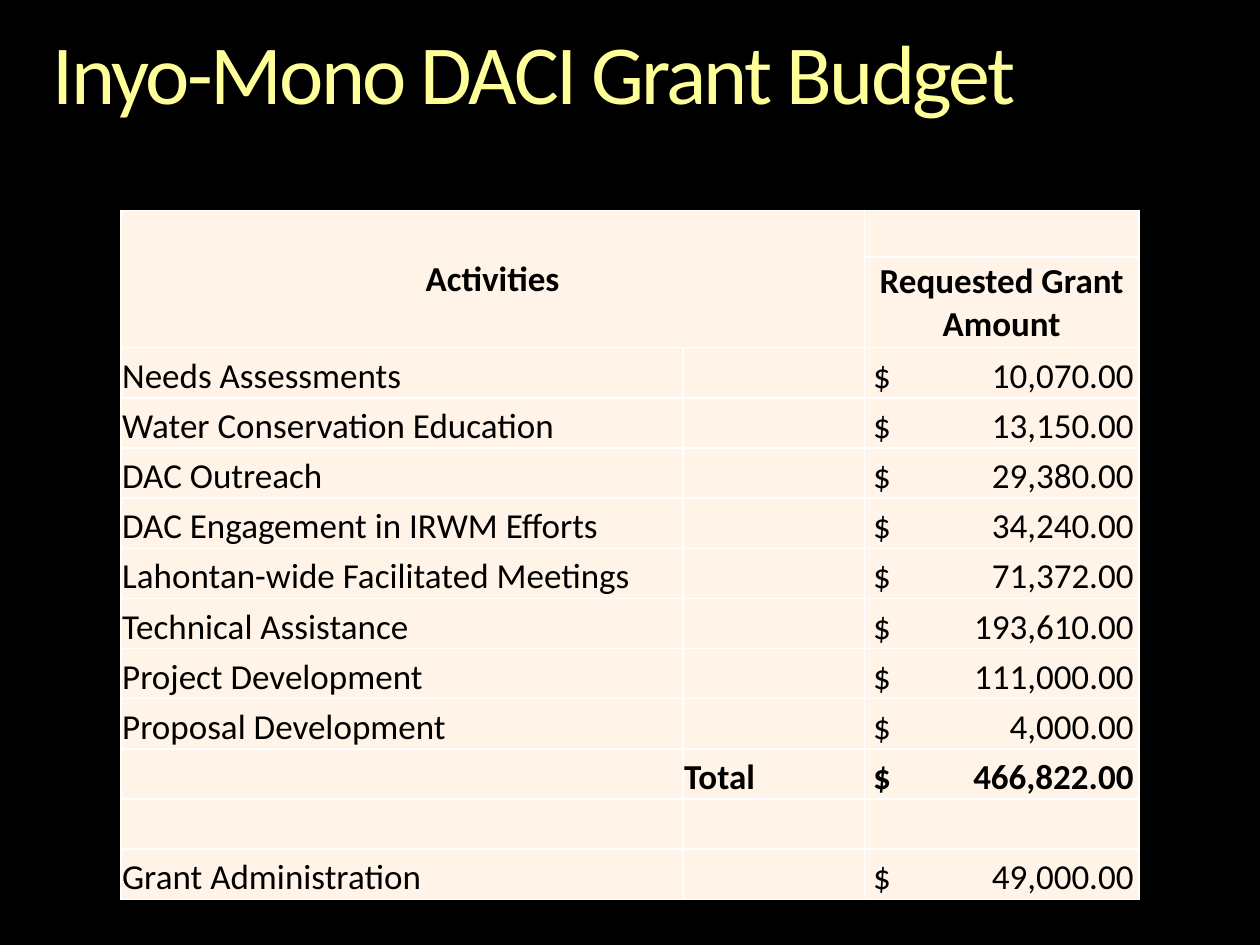
import pptx
import pptx.util
import pptx.dml.color
import pptx.enum.text
import pptx.oxml
import pptx.oxml.ns

Inches, Pt = pptx.util.Inches, pptx.util.Pt
RGBColor = pptx.dml.color.RGBColor
ALIGN = pptx.enum.text.PP_ALIGN
ANCHOR = pptx.enum.text.MSO_ANCHOR

BLACK = RGBColor(0x00, 0x00, 0x00)
WHITE = RGBColor(0xFF, 0xFF, 0xFF)
YELLOW = RGBColor(0xFF, 0xFF, 0x99)
CREAM = RGBColor(0xFF, 0xF4, 0xE7)

TITLE = "Inyo-Mono DACI Grant Budget"
HEADER = [("Activities", "", ""), ("", "", "Requested Grant Amount")]
BUDGET = [
    ("Needs Assessments", "", "10,070.00"),
    ("Water Conservation Education", "", "13,150.00"),
    ("DAC Outreach", "", "29,380.00"),
    ("DAC Engagement in IRWM Efforts", "", "34,240.00"),
    ("Lahontan-wide Facilitated Meetings", "", "71,372.00"),
    ("Technical Assistance", "", "193,610.00"),
    ("Project Development", "", "111,000.00"),
    ("Proposal Development", "", "4,000.00"),
    ("", "Total", "466,822.00"),
    ("", "", ""),
    ("Grant Administration", "", "49,000.00"),
]
LEFT, TOP, HEIGHT = 0.96, 1.67, 5.47
COLS = [4.46, 1.44, 2.18]
HEADER_ROWS = [0.37, 0.72]
AMOUNT_INDENT, AMOUNT_TAB = 0.07, 2.07


def apply(target, **values):
    for name, value in values.items():
        setattr(target, name, value)


def add_borders(cell):
    tc_pr = cell._tc.get_or_add_tcPr()
    for side in ("lnL", "lnR", "lnT", "lnB"):
        tc_pr.append(pptx.oxml.parse_xml(
            f'<a:{side} {pptx.oxml.ns.nsdecls("a")} w="{Pt(1)}"><a:solidFill>'
            f'<a:srgbClr val="{WHITE}"/></a:solidFill></a:{side}>'))


def add_right_tab(p, position):
    p._p.get_or_add_pPr().append(pptx.oxml.parse_xml(
        f'<a:tabLst {pptx.oxml.ns.nsdecls("a")}>'
        f'<a:tab pos="{Inches(position)}" algn="r"/></a:tabLst>'))


def fill_cell(cell, text, header, amount, bold):
    add_borders(cell)
    cell.fill.solid()
    cell.fill.fore_color.rgb = CREAM
    apply(cell, margin_left=Inches(AMOUNT_INDENT if amount else 0.01),
          margin_right=Inches(0.01), margin_top=Inches(0.01), margin_bottom=0,
          vertical_anchor=ANCHOR.MIDDLE if header else ANCHOR.BOTTOM)
    p = cell.text_frame.paragraphs[0]
    p.alignment = ALIGN.CENTER if header else ALIGN.LEFT
    if amount:
        add_right_tab(p, AMOUNT_TAB)
    apply(p.font, size=Pt(20), name="Calibri")
    if text:
        r = p.add_run()
        r.text = f"$\t{text}" if amount else text
        apply(r.font, size=Pt(20), name="Calibri", bold=bold)
        r.font.color.rgb = BLACK


def add_title(s):
    title = s.shapes.title
    apply(title, left=Inches(0.42), top=Inches(0.25), width=Inches(9.17), height=Inches(0.73))
    tf = title.text_frame
    apply(tf, margin_left=0, margin_right=0, margin_top=0, margin_bottom=0,
          word_wrap=True, vertical_anchor=ANCHOR.TOP)
    p = tf.paragraphs[0]
    apply(p, alignment=ALIGN.LEFT, line_spacing=0.9)
    r = p.add_run()
    r.text = TITLE
    apply(r.font, size=Pt(48), name="Calibri")
    r.font.color.rgb = YELLOW
    r._r.get_or_add_rPr().set("spc", "-150")


def add_budget(s):
    rows = HEADER + BUDGET
    body_height = (HEIGHT - sum(HEADER_ROWS)) / len(BUDGET)
    heights = HEADER_ROWS + [body_height] * len(BUDGET)
    table = s.shapes.add_table(len(rows), len(COLS), Inches(LEFT), Inches(TOP),
                               Inches(sum(COLS)), Inches(HEIGHT)).table
    apply(table, first_row=False, horz_banding=False)
    for column, width in zip(table.columns, COLS):
        column.width = Inches(width)
    for i, (row, height) in enumerate(zip(rows, heights)):
        table.rows[i].height = Inches(height)
        header = i < len(HEADER)
        for j, text in enumerate(row):
            amount = not header and j == 2 and bool(text)
            fill_cell(table.cell(i, j), text, header, amount, header or "Total" in row)
    table.cell(0, 0).merge(table.cell(1, 1))


def main():
    prs = pptx.Presentation()
    apply(prs, slide_width=Inches(10), slide_height=Inches(7.5))
    s = prs.slides.add_slide(prs.slide_layouts[5])
    s.background.fill.solid()
    s.background.fill.fore_color.rgb = BLACK
    add_title(s)
    add_budget(s)
    prs.save("out.pptx")


if __name__ == "__main__":
    main()
